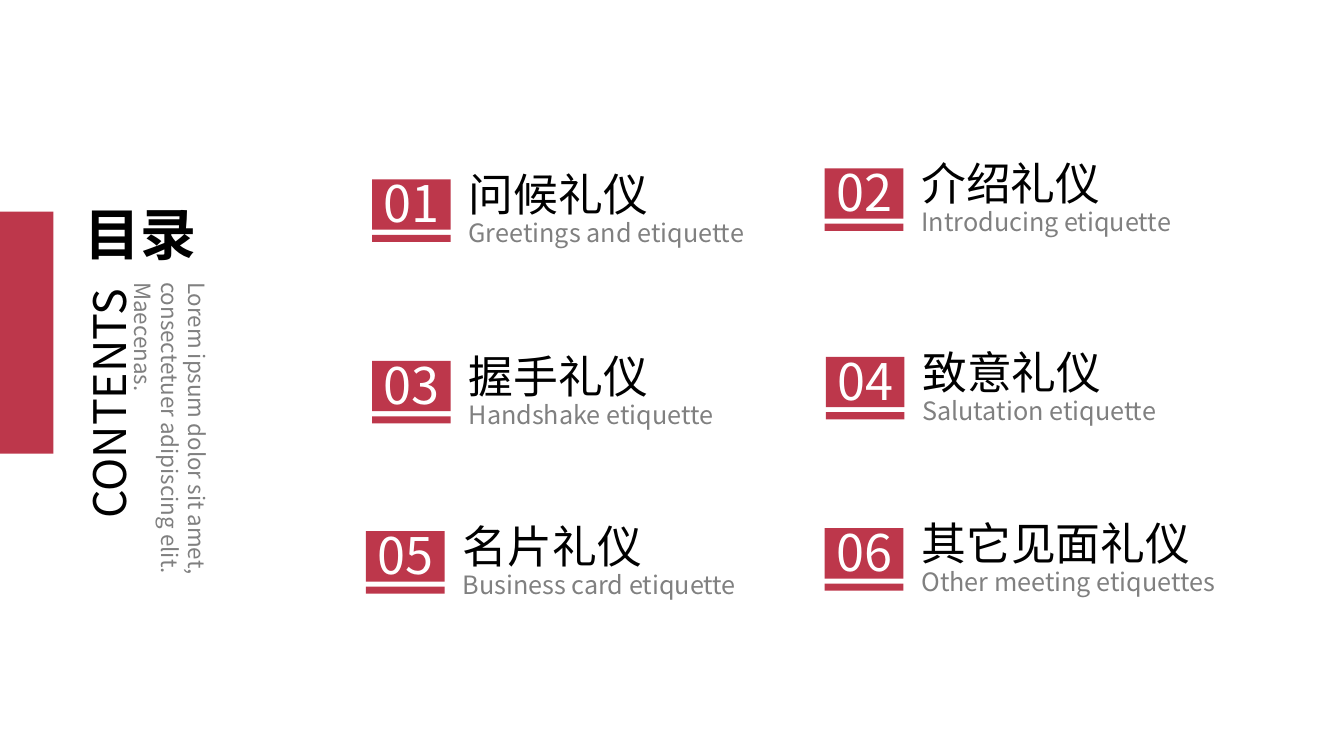
import dataclasses
import typing

import lxml.etree
import pptx
import pptx.dml.color
import pptx.enum.shapes
import pptx.enum.text
import pptx.oxml.ns
import pptx.util

Inches = pptx.util.Inches
FONT = "Noto Sans CJK SC"
COLORS = {"accent": "BD374B", "ink": "000000", "muted": "808080", "paper": "FFFFFF"}
BADGE_WIDTH = 0.78


@dataclasses.dataclass(frozen=True)
class Topic:
    left: float
    top: float
    heading: str
    caption: str
    caption_width: float


TOPICS = [
    Topic(3.69, 1.78, "问候礼仪", "Greetings and etiquette", 3.07),
    Topic(8.18, 1.67, "介绍礼仪", "Introducing etiquette", 2.78),
    Topic(3.69, 3.58, "握手礼仪", "Handshake etiquette", 2.72),
    Topic(8.19, 3.54, "致意礼仪", "Salutation etiquette", 2.6),
    Topic(3.63, 5.27, "名片礼仪", "Business card etiquette", 3),
    Topic(8.18, 5.24, "其它见面礼仪", "Other meeting etiquettes", 3.27),
]


def write_text(box: typing.Any, text: str, size: float, color: str,
               bold: bool = False, wrap: bool = False) -> None:
    frame = box.text_frame
    frame.text = text
    frame.word_wrap = wrap
    frame.auto_size = pptx.enum.text.MSO_AUTO_SIZE.SHAPE_TO_FIT_TEXT
    frame.vertical_anchor = pptx.enum.text.MSO_ANCHOR.TOP
    paragraph = frame.paragraphs[0]
    paragraph.alignment = pptx.enum.text.PP_ALIGN.LEFT
    font = paragraph.runs[0].font
    font.name = FONT
    font.size = pptx.util.Pt(size)
    font.bold = bold
    font.color.rgb = pptx.dml.color.RGBColor.from_string(COLORS[color])
    # Chinese glyphs take the East Asian typeface
    east_asian = lxml.etree.SubElement(font._element, pptx.oxml.ns.qn("a:ea"))
    east_asian.set("typeface", FONT)


def add_text(shapes: typing.Any, left: float, top: float, width: float, height: float,
             text: str, size: float, color: str, rotation: float = 0,
             wrap: bool = False) -> None:
    box = shapes.add_textbox(Inches(left), Inches(top), Inches(width), Inches(height))
    box.rotation = rotation
    write_text(box, text, size, color, wrap=wrap)


def add_block(shapes: typing.Any, left: float, top: float, width: float,
              height: float) -> None:
    block = shapes.add_shape(pptx.enum.shapes.MSO_SHAPE.RECTANGLE,
                             Inches(left), Inches(top), Inches(width), Inches(height))
    block.shadow.inherit = False
    block.fill.solid()
    block.fill.fore_color.rgb = pptx.dml.color.RGBColor.from_string(COLORS["accent"])
    block.line.fill.background()


def add_topic(slide: typing.Any, number: int, topic: Topic) -> None:
    shapes = slide.shapes.add_group_shape().shapes
    left, top = topic.left, topic.top
    add_block(shapes, left, top, BADGE_WIDTH, 0.5)
    add_block(shapes, left, top + 0.55, BADGE_WIDTH, 0.07)
    add_text(shapes, left + 0.02, top - 0.12, 0.79, 0.71, f"{number:02}", 36, "paper")
    text_left = left + 0.86
    heading_width = 0.22 + 0.445 * len(topic.heading)
    add_text(shapes, text_left, top - 0.17, heading_width, 0.64, topic.heading, 32, "ink")
    add_text(shapes, text_left, top + 0.33, topic.caption_width, 0.4,
             topic.caption, 18, "muted")


def main() -> None:
    presentation = pptx.Presentation()
    presentation.slide_width = Inches(13.33)
    presentation.slide_height = Inches(7.5)
    slide = presentation.slides.add_slide(presentation.slide_layouts.get_by_name("Title Only"))

    add_block(slide.shapes, 0, 2.1, 0.53, 2.4)
    title = slide.shapes.title
    title.left, title.top = Inches(0.74), Inches(1.93)
    title.width, title.height = Inches(1.32), Inches(0.77)
    write_text(title, "目录", 40, "ink", bold=True)
    add_text(slide.shapes, -0.25, 3.59, 2.67, 0.64, "CONTENTS", 32, "ink", rotation=270)
    add_text(slide.shapes, -0.36, 4.29, 4.09, 0.91,
             "Lorem ipsum dolor sit amet, consectetuer adipiscing elit. Maecenas.",
             16, "muted", rotation=90, wrap=True)

    for number, topic in enumerate(TOPICS, start=1):
        add_topic(slide, number, topic)

    presentation.save("out.pptx")


if __name__ == "__main__":
    main()
